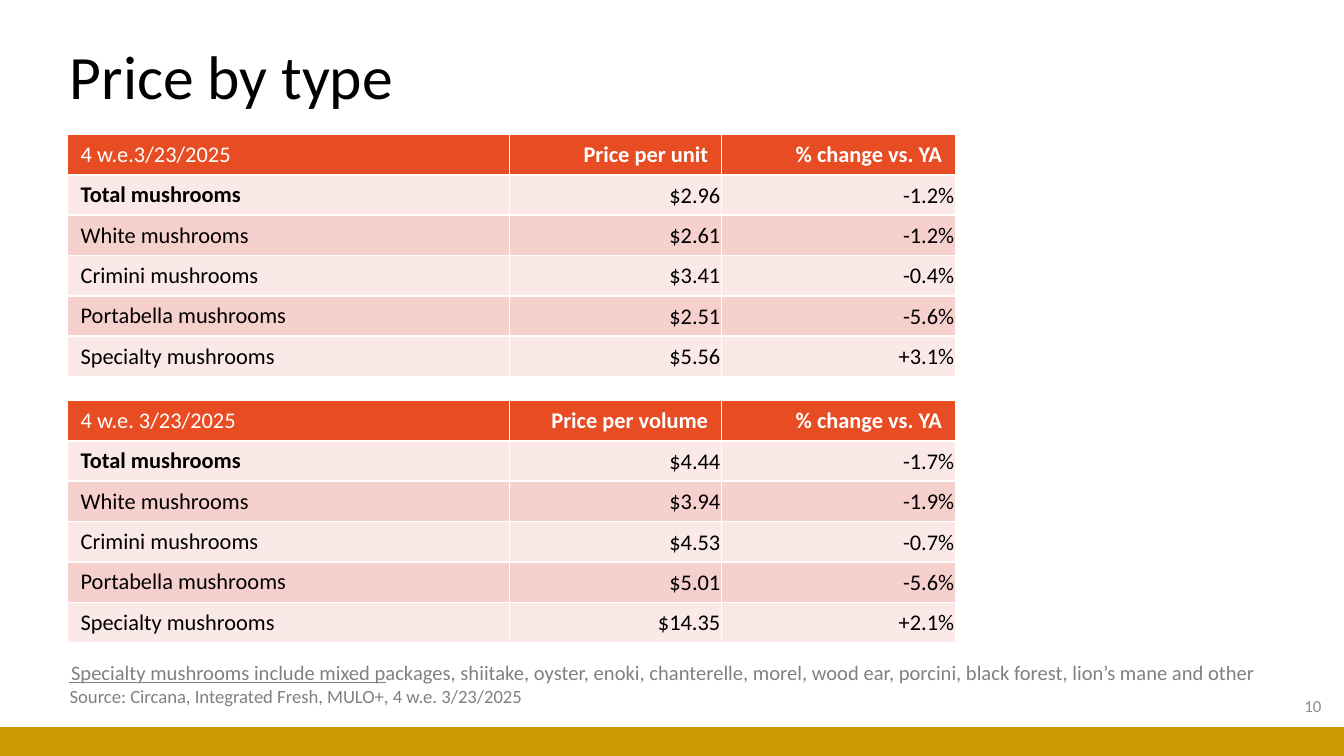
from dataclasses import dataclass
from typing import Any

from lxml import etree
from pptx import Presentation
from pptx import util as u
from pptx.dml.color import RGBColor
from pptx.enum import shapes, text
from pptx.oxml.ns import qn

COLUMNS = 1000
ROWS = COLUMNS * 9 / 16
UNIT = u.Inches(10) // COLUMNS
TABLE_LEFT, ROW_HEIGHT = 50, 30
COLUMN_WIDTHS = (329, 158, 174)
BAND_TOP = 541
LEFT, RIGHT = text.PP_ALIGN.LEFT, text.PP_ALIGN.RIGHT
TOP, MIDDLE = text.MSO_ANCHOR.TOP, text.MSO_ANCHOR.MIDDLE
GOLD, ORANGE, PINK, PALE = "CC9900", "E84C22", "F6D0CD", "FBE9E8"
WHITE, BLACK, GREY, LIGHT_GREY = "FFFFFF", "000000", "808080", "8C8C8C"
KINDS = ("Total", "White", "Crimini", "Portabella", "Specialty")
TIGHT = {"margin_left": UNIT, "margin_right": UNIT, "margin_top": UNIT, "margin_bottom": 0}


@dataclass(frozen=True)
class Area:
    """A rectangle in grid columns and rows."""
    column: float
    row: float
    columns: float
    rows: float

    def box(self) -> tuple[int, ...]:
        """Return left, top, width and height as lengths."""
        return tuple(int(n * UNIT) for n in (self.column, self.row, self.columns, self.rows))


@dataclass(frozen=True)
class Label:
    """A line of text with its place and look."""
    words: str
    area: Area
    size: int
    colour: str
    align: Any = LEFT
    anchor: Any = TOP
    wrap: bool = False


@dataclass(frozen=True)
class PriceTable:
    """Prices and yearly changes for each kind of mushroom."""
    row: int
    period: str
    measure: str
    prices: tuple[str, ...]
    changes: tuple[str, ...]


HEADING = Label("Price by type", Area(42, 5, 862, 109), 33, BLACK, anchor=MIDDLE, wrap=True)
LABELS = (
    Label("10", Area(768, 510, 225, 30), 9, LIGHT_GREY, RIGHT, MIDDLE, True),
    Label("Source: Circana, Integrated Fresh, MULO+, 4 w.e. 3/23/2025",
          Area(42, 505, 372, 27), 10, GREY),
    Label("Specialty mushrooms include mixed packages, shiitake, oyster, enoki, chanterelle, "
          "morel, wood ear, porcini, black forest, lion’s mane and other",
          Area(43, 486, 905, 29), 11, GREY),
)
TABLES = (
    PriceTable(100, "4 w.e.3/23/2025", "Price per unit",
               ("$2.96", "$2.61", "$3.41", "$2.51", "$5.56"),
               ("-1.2%", "-1.2%", "-0.4%", "-5.6%", "+3.1%")),
    PriceTable(298, "4 w.e. 3/23/2025", "Price per volume",
               ("$4.44", "$3.94", "$4.53", "$5.01", "$14.35"),
               ("-1.7%", "-1.9%", "-0.7%", "-5.6%", "+2.1%")),
)


def apply(target: Any, values: dict[str, Any]) -> None:
    """Set every named attribute on the target."""
    for name, value in values.items():
        setattr(target, name, value)


def paint(fill: Any, colour: str) -> None:
    """Give a fill one solid colour."""
    fill.solid()
    fill.fore_color.rgb = RGBColor.from_string(colour)


def write(frame: Any, words: str, size: int, colour: str, align: Any, bold: bool = False) -> None:
    """Write one formatted paragraph into a text frame."""
    paragraph = frame.paragraphs[0]
    paragraph.alignment = align
    run = paragraph.add_run()
    run.text = words
    apply(run.font, {"name": "Calibri", "size": u.Pt(size), "bold": bold})
    paint(run.font.fill, colour)


def fill_label(holder: Any, label: Label) -> None:
    """Format a text holder and write its label."""
    apply(holder.text_frame, {"word_wrap": label.wrap, "vertical_anchor": label.anchor,
                              "auto_size": text.MSO_AUTO_SIZE.NONE if label.wrap
                              else text.MSO_AUTO_SIZE.SHAPE_TO_FIT_TEXT})
    write(holder.text_frame, label.words, label.size, label.colour, label.align)


def draw_title(slide: Any, label: Label) -> None:
    """Move and fill the title placeholder."""
    title = slide.shapes.title
    apply(title, dict(zip(("left", "top", "width", "height"), label.area.box())))
    fill_label(title, label)
    title.text_frame.paragraphs[0].line_spacing = 0.9


def draw_band(slide: Any, area: Area, colour: str) -> None:
    """Draw a plain coloured band."""
    band = slide.shapes.add_shape(shapes.MSO_SHAPE.RECTANGLE, *area.box())
    band.shadow.inherit = False
    paint(band.fill, colour)
    band.line.fill.background()


def draw_rule(slide: Any, start: int, end: int, row: int) -> None:
    """Draw the thin line above the source."""
    ends = (n * UNIT for n in (start, row, end, row))
    rule = slide.shapes.add_connector(shapes.MSO_CONNECTOR.STRAIGHT, *ends)
    paint(rule.line.fill, GREY)
    rule.line.width = u.Pt(0.5)
    etree.SubElement(rule._element.spPr, qn("a:effectLst"))


def add_borders(cell: Any) -> None:
    """Put a white one-point border round a cell."""
    properties = cell._tc.get_or_add_tcPr()
    for side in ("a:lnL", "a:lnR", "a:lnT", "a:lnB"):
        border = etree.SubElement(properties, qn(side), w=str(int(u.Pt(1))))
        solid = etree.SubElement(border, qn("a:solidFill"))
        etree.SubElement(solid, qn("a:srgbClr"), val=WHITE)


def draw_table(slide: Any, prices: PriceTable) -> None:
    """Draw one price table with a header and banded rows."""
    lines = [(prices.period, prices.measure, "% change vs. YA")]
    kinds = (f"{kind} mushrooms" for kind in KINDS)
    lines += zip(kinds, prices.prices, prices.changes)
    area = Area(TABLE_LEFT, prices.row, sum(COLUMN_WIDTHS), ROW_HEIGHT * len(lines))
    table = slide.shapes.add_table(len(lines), len(COLUMN_WIDTHS), *area.box()).table
    for column, width in zip(table.columns, COLUMN_WIDTHS):
        column.width = width * UNIT
    for r, line in enumerate(lines):
        header = r == 0
        for c, words in enumerate(line):
            cell = table.cell(r, c)
            add_borders(cell)
            paint(cell.fill, ORANGE if header else PALE if r % 2 else PINK)
            cell.vertical_anchor = TOP if header else MIDDLE
            apply(cell, TIGHT if c and not header else {})
            bold = c > 0 if header else (r, c) == (1, 0)
            write(cell.text_frame, words, 12, WHITE if header else BLACK,
                  RIGHT if c else LEFT, bold)


def main() -> None:
    """Build and save the price slide."""
    deck = Presentation()
    apply(deck, {"slide_width": COLUMNS * UNIT, "slide_height": int(ROWS * UNIT)})
    slide = deck.slides.add_slide(deck.slide_layouts.get_by_name("Title Only"))
    draw_band(slide, Area(0, BAND_TOP, COLUMNS, ROWS - BAND_TOP), GOLD)
    draw_title(slide, HEADING)
    draw_rule(slide, 51, 287, 508)
    for label in LABELS:
        fill_label(slide.shapes.add_textbox(*label.area.box()), label)
    for prices in TABLES:
        draw_table(slide, prices)
    deck.save("out.pptx")


if __name__ == "__main__":
    main()
